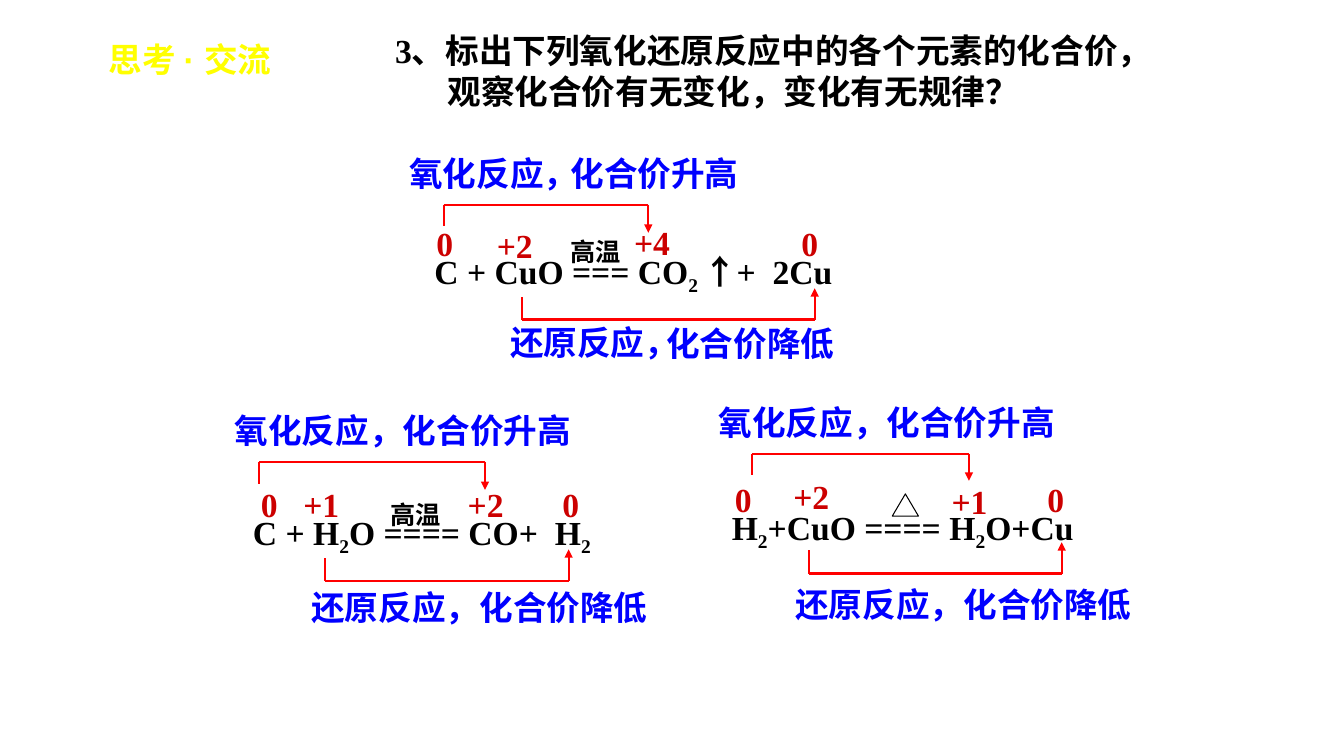
"""Builds a slide on valence changes in three redox reactions."""
from lxml.etree import SubElement
from pptx import Presentation
from pptx.dml.color import RGBColor
from pptx.enum.shapes import MSO_CONNECTOR as CONN, MSO_SHAPE as SHAPE
from pptx.enum.text import MSO_AUTO_SIZE as AUTO
from pptx.oxml.ns import qn
from pptx.util import Inches, Pt

COLORS = {"text": "000000", "label": "0000FF", "valence": "CC0000",
          "bracket": "FF0000", "heading": "FFFF00"}
SERIF, SANS, CJK = "Times New Roman", "Arial", "Noto Sans CJK SC"
UP, DOWN = "氧化反应，化合价升高", "还原反应，化合价降低"

REACTIONS = [
    {"equation": (4.21, 2.44, 5.21, ["C + CuO === CO", "_2 ", "↑", "+  2Cu"]),
     "heat": (5.56, 2.3),
     "valences": [("0", 4.23, 2.16), ("+2", 4.83, 2.18),
                  ("+4", 6.19, 2.15), ("0", 7.85, 2.16)],
     "brackets": [(4.4, 2.24, 2.03, 6.43, 2.31), (5.18, 2.95, 3.17, 8.08, 2.86)],
     "labels": [(UP[:5], 3.96, 1.47, SANS), (UP[5:], 5.56, 1.47, SERIF),
                (DOWN[:5], 4.96, 3.14, SANS), (DOWN[5:], 6.51, 3.15, SERIF)]},
    {"equation": (2.41, 5.03, 5.21, ["C + H", "_2", "O ==== CO+  H", "_2"]),
     "heat": (3.77, 4.9),
     "valences": [("0", 2.49, 4.75), ("+1", 2.91, 4.75),
                  ("+2", 4.54, 4.75), ("0", 5.48, 4.75)],
     "brackets": [(2.57, 4.8, 4.58, 4.81, 4.86), (3.22, 5.54, 5.76, 5.64, 5.45)],
     "labels": [(UP, 2.23, 4.02, SANS), (DOWN, 2.99, 5.77, SANS)]},
    {"equation": (7.16, 4.98, 4.51, ["H", "_2", "+CuO ==== H", "_2", "O+Cu"]),
     "heat": None,
     "valences": [("0", 7.19, 4.7), ("+2", 7.77, 4.67),
                  ("+1", 9.34, 4.72), ("0", 10.29, 4.7)],
     "brackets": [(7.46, 4.71, 4.5, 9.61, 4.77), (8.02, 5.46, 5.69, 10.53, 5.38)],
     "labels": [(UP, 7.03, 3.94, SANS), (DOWN, 7.79, 5.74, SANS)]},
]


def rgb(name):
    return RGBColor.from_string(COLORS[name])


def set_font(p, name, size, color):
    f = p.font
    f.name, f.size, f.bold = name, Pt(size), True
    f.color.rgb = rgb(color)
    SubElement(p._p.pPr.find(qn("a:defRPr")), qn("a:ea"), typeface=CJK)


def add_text(s, x, y, w, lines, color="text", font=SERIF, size=24, h=0.5):
    """Adds lines of runs; a leading underscore marks a subscript."""
    tf = s.shapes.add_textbox(Inches(x), Inches(y), Inches(w), Inches(h)).text_frame
    tf.word_wrap, tf.auto_size = True, AUTO.SHAPE_TO_FIT_TEXT
    for i, runs in enumerate(lines):
        p = tf.add_paragraph() if i else tf.paragraphs[0]
        set_font(p, font, size, color)
        for text in runs:
            r = p.add_run()
            r.text = text.removeprefix("_")
            if text.startswith("_"):
                r.font._element.set("baseline", "-25000")
            elif text == "↑":
                r.font.name = CJK
            elif text == "· ":
                r.font.name = SANS
    return tf


def add_line(s, x1, y1, x2, y2, arrow=False):
    c = s.shapes.add_connector(CONN.STRAIGHT, Inches(x1), Inches(y1),
                               Inches(x2), Inches(y2))
    c.line.color.rgb, c.line.width = rgb("bracket"), Pt(1.5)
    if arrow:
        SubElement(c.line._get_or_add_ln(), qn("a:tailEnd"), type="triangle")
    SubElement(c._element.spPr, qn("a:effectLst"))


def add_bracket(s, x1, y_start, y_bar, x2, y_end):
    add_line(s, x1, y_start, x1, y_bar)
    add_line(s, x1, y_bar, x2, y_bar)
    add_line(s, x2, y_bar, x2, y_end, arrow=True)


def add_heat_triangle(s, x, y):
    sp = s.shapes.add_shape(SHAPE.ISOSCELES_TRIANGLE, Inches(x), Inches(y),
                            Inches(0.26), Inches(0.22))
    sp.shadow.inherit = False
    sp.fill.background()
    sp.line.color.rgb, sp.line.width = rgb("text"), Pt(0.75)


def add_reaction(s, equation, heat, valences, brackets, labels):
    x, y, w, runs = equation
    add_text(s, x, y, w, [runs])
    if heat:
        add_text(s, *heat, 1.07, [["高温"]], font=SANS, size=18, h=0.4)
    else:
        add_heat_triangle(s, 8.85, 4.9)
    for bracket in brackets:
        add_bracket(s, *bracket)
    for text, x, y in valences:
        add_text(s, x, y, 0.63, [[text]], "valence")
    for text, x, y, font in labels:
        add_text(s, x, y, 3.99 if len(text) > 5 else 1.95, [[text]], "label", font)


def main():
    prs = Presentation()
    prs.slide_width, prs.slide_height = Inches(13.33), Inches(7.5)
    s = prs.slides.add_slide(prs.slide_layouts[6])
    add_text(s, 0.98, 0.34, 2.08, [["思考 ", "· ", "交流"]], "heading", CJK)
    tf = add_text(s, 3.82, 0.25, 7.95, [["3、标出下列氧化还原反应中的各个元素的化合价，"],
                                        ["观察化合价有无变化，变化有无规律？"]], h=0.91)
    tf.paragraphs[1]._p.pPr.set("marL", str(Inches(0.52)))
    for reaction in REACTIONS:
        add_reaction(s, **reaction)
    prs.save("out.pptx")


if __name__ == "__main__":
    main()
